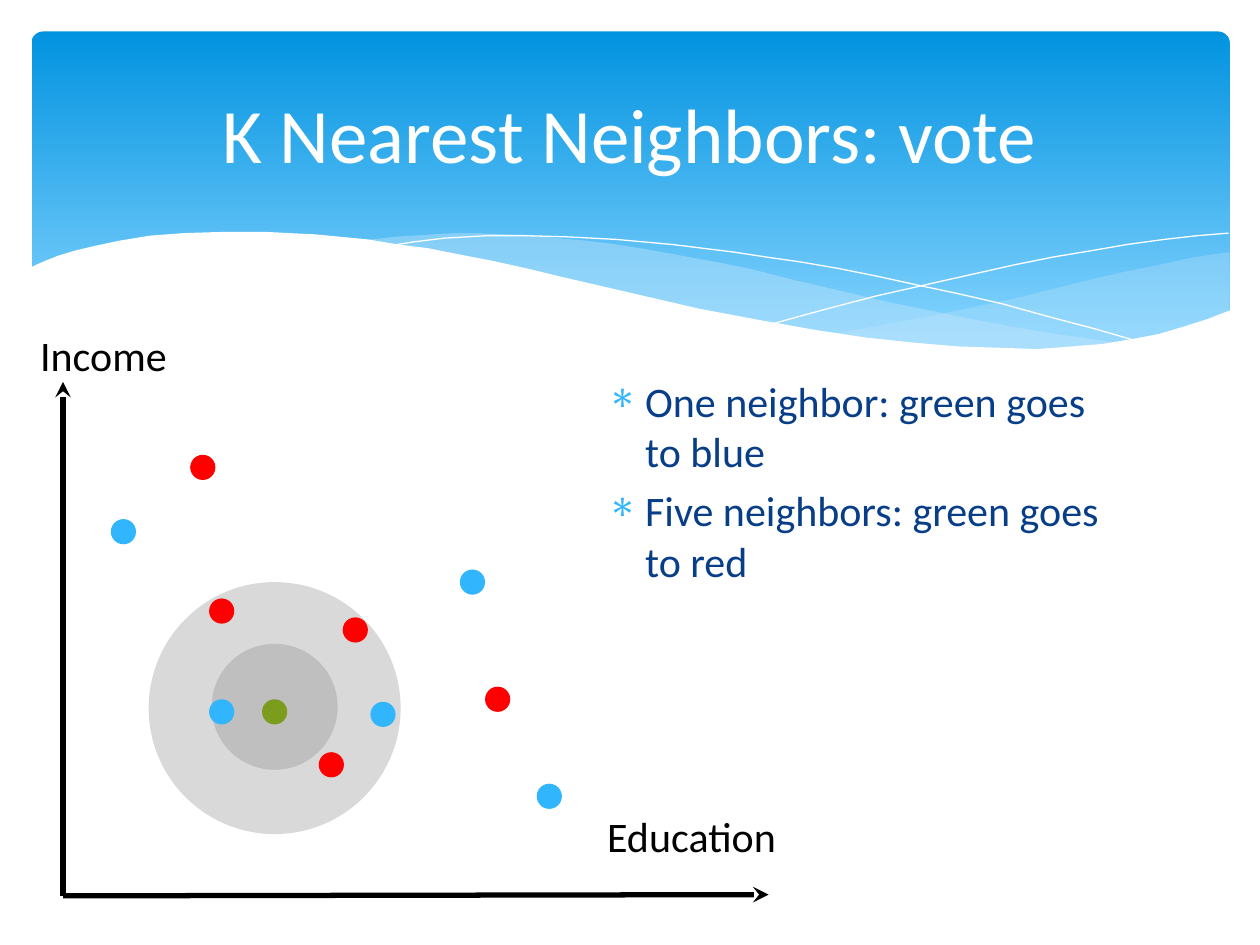
"""Builds a slide on voting among the K nearest neighbors."""
import pptx
import pptx.dml.color
import pptx.enum.dml
import pptx.enum.shapes
import pptx.enum.text
import pptx.oxml.ns
import pptx.util
from lxml import etree

Inches = pptx.util.Inches
Pt = pptx.util.Pt
RGBColor = pptx.dml.color.RGBColor
Kind = pptx.enum.shapes.MSO_SHAPE
Align = pptx.enum.text.PP_ALIGN
Anchor = pptx.enum.text.MSO_ANCHOR
qn = pptx.oxml.ns.qn

WHITE = RGBColor(0xFF, 0xFF, 0xFF)
BLACK = RGBColor(0, 0, 0)
NAVY = RGBColor(0x07, 0x3E, 0x87)
TOP = RGBColor(0x02, 0x93, 0xE0)
BASE = RGBColor(0x83, 0xD3, 0xFE)
PALE = RGBColor(0xC6, 0xE7, 0xFC)
LIGHT = RGBColor(0xD9, 0xD9, 0xD9)
GRAY = RGBColor(0xBF, 0xBF, 0xBF)
RED = RGBColor(0xFF, 0, 0)
BLUE = RGBColor(0x31, 0xB6, 0xFD)
GREEN = RGBColor(0x7C, 0x9C, 0x1E)

DOT = 0.2
DOTS = {
    RED: [(1.51, 3.61), (1.66, 4.75), (2.53, 5.97), (2.72, 4.9), (3.85, 5.45)],
    BLUE: [(0.88, 4.12), (1.66, 5.55), (2.94, 5.57), (3.65, 4.52), (4.26, 6.22)],
    GREEN: [(2.08, 5.55)],
}

# Curve points are in hundredths of an inch.
RIGHT = [
    (976, 200), (948, 204), (921, 210), (891, 216), (861, 223), (805, 237),
    (753, 248), (706, 257), (661, 265), (691, 269), (719, 272), (745, 275),
    (769, 277), (803, 278), (835, 277), (863, 275), (889, 272), (913, 267),
    (935, 262), (949, 257), (963, 252), (976, 247)]
LEFT = [
    (893, 273), (866, 269), (837, 265), (807, 260), (775, 254), (741, 247),
    (706, 240), (668, 231), (629, 222), (598, 214), (569, 208), (541, 203),
    (514, 198), (489, 194), (465, 191), (442, 189), (420, 187), (399, 186),
    (380, 185), (361, 185), (344, 186), (313, 188), (286, 191), (323, 196),
    (362, 203), (404, 211), (449, 222), (491, 232), (530, 240), (566, 248),
    (601, 255), (634, 261), (665, 266), (695, 270), (722, 274), (748, 276),
    (773, 277), (796, 278), (828, 278), (857, 277), (876, 275), (893, 273)]
FALL = [
    (309, 195), (328, 192), (353, 189), (387, 187), (416, 187), (450, 188),
    (489, 190), (533, 194), (582, 200), (608, 204), (636, 208), (665, 213),
    (695, 219), (727, 226), (760, 233), (795, 241), (831, 251), (869, 261),
    (907, 272)]
RISE = [
    (613, 257), (653, 246), (695, 235), (748, 223), (806, 210), (836, 204),
    (866, 199), (895, 194), (924, 190), (951, 187), (975, 185)]
FRONT = [
    (977, 246), (959, 253), (940, 259), (920, 265), (899, 269), (875, 273),
    (850, 275), (823, 277), (793, 276), (761, 275), (726, 272), (688, 268),
    (648, 262), (603, 254), (555, 245), (503, 233), (447, 220), (418, 213),
    (391, 207), (365, 202), (340, 197), (316, 194), (292, 190), (271, 188),
    (250, 186), (230, 185), (211, 184), (177, 184), (146, 185), (119, 187),
    (95, 191), (76, 195), (59, 199), (46, 203), (36, 207), (29, 210),
    (23, 213), (23, 329), (977, 329)]


def paint(shape, color, alpha=100):
    """Give a shape a plain fill, with no line or shadow."""
    shape.shadow.inherit = False
    shape.line.fill.background()
    shape.fill.solid()
    shape.fill.fore_color.rgb = color
    if alpha < 100:
        tint = shape.fill._xPr.find(".//" + qn("a:srgbClr"))
        etree.SubElement(tint, qn("a:alpha"), val=str(alpha * 1000))


def write(frame, *lines, size=24, color=BLACK, align=Align.LEFT,
          anchor=Anchor.TOP, before=0, mark=None):
    """Fill a text frame with one paragraph for each line."""
    frame.word_wrap = True
    frame.auto_size = pptx.enum.text.MSO_AUTO_SIZE.NONE
    frame.vertical_anchor = anchor
    frame.text = "\n".join(lines)
    for par in frame.paragraphs:
        par.alignment = align
        par.space_before = Pt(before)
        font = par.runs[0].font
        font.name, font.size, font.color.rgb = "Calibri", Pt(size), color
        if mark:
            bullet(par, mark)


def bullet(par, mark):
    """Set a hanging bullet on a paragraph."""
    props = par._p.get_or_add_pPr()
    props.set("marL", str(Inches(0.3)))
    props.set("indent", str(-Inches(0.3)))
    tint = etree.SubElement(props, qn("a:buClr"))
    etree.SubElement(tint, qn("a:srgbClr"), val=str(BLUE))
    etree.SubElement(props, qn("a:buFont"), typeface="Symbol")
    etree.SubElement(props, qn("a:buChar"), char=mark)


def place(shape, left, top, width, height):
    """Move a placeholder and bring it to the front."""
    shape.left, shape.top = Inches(left), Inches(top)
    shape.width, shape.height = Inches(width), Inches(height)
    shape.element.getparent().append(shape.element)
    return shape.text_frame


def label(slide, text, left, top, width):
    """Add an axis label."""
    box = slide.shapes.add_textbox(
        Inches(left), Inches(top), Inches(width), Inches(0.5))
    write(box.text_frame, text)


def disc(slide, left, top, size, color):
    """Add a filled circle."""
    shape = slide.shapes.add_shape(
        Kind.OVAL, Inches(left), Inches(top), Inches(size), Inches(size))
    paint(shape, color)


def axis(slide, right, top):
    """Add an axis arrow from the plot's origin."""
    line = slide.shapes.add_connector(
        pptx.enum.shapes.MSO_CONNECTOR.STRAIGHT,
        Inches(0.5), Inches(7.11), Inches(right), Inches(top))
    line.line.color.rgb = BLACK
    line.line.width = Pt(3)
    etree.SubElement(line.line._get_or_add_ln(), qn("a:tailEnd"), type="stealth")
    etree.SubElement(line.element.spPr, qn("a:effectLst"))


def outline(slide, points, close=True):
    """Add a freeform through points."""
    path = slide.shapes.build_freeform(*points[0], scale=Inches(0.01))
    path.add_line_segments(points[1:], close=close)
    return path.convert_to_shape()


def banner(slide):
    """Draw the blue banner and its waves."""
    panel = slide.shapes.add_shape(
        Kind.ROUNDED_RECTANGLE, Inches(0.25), Inches(0.25), Inches(9.51), Inches(2.7))
    panel.adjustments[0] = 0.034
    paint(panel, TOP)
    panel.fill.gradient()
    panel.fill.gradient_angle = 270
    for stop, (color, spot) in zip(panel.fill.gradient_stops, [(TOP, 0), (BASE, 0.9)]):
        stop.color.rgb, stop.position = color, spot
    paint(outline(slide, RIGHT), PALE, alpha=29)
    paint(outline(slide, LEFT), PALE, alpha=40)
    for points in (FALL, RISE):
        curve = outline(slide, points, close=False)
        curve.shadow.inherit = False
        curve.fill.background()
        curve.line.color.rgb = WHITE
        curve.line.width = Pt(0)
    paint(outline(slide, FRONT), WHITE)


def main():
    """Build and save the slide."""
    deck = pptx.Presentation()
    deck.slide_width, deck.slide_height = Inches(10), Inches(7.5)
    slide = deck.slides.add_slide(deck.slide_layouts[1])
    banner(slide)
    disc(slide, 1.18, 4.62, 2, LIGHT)
    disc(slide, 1.68, 5.11, 1, GRAY)
    body = place(slide.placeholders[1], 4.72, 2.93, 4.33, 3.24)
    body.margin_right = Inches(0.2)
    write(body, "One neighbor: green goes to blue", "Five neighbors: green goes to red",
          color=NAVY, before=4.8, mark="∗")
    title = place(slide.shapes.title, 0.5, 0.37, 9, 1.37)
    write(title, "K Nearest Neighbors: vote", size=44, color=WHITE,
          align=Align.CENTER, anchor=Anchor.MIDDLE)
    axis(slide, 6.1, 7.1)
    axis(slide, 0.5, 3.03)
    for color, spots in DOTS.items():
        for left, top in spots:
            disc(slide, left, top, DOT, color)
    label(slide, "Income", 0.22, 2.57, 1.56)
    label(slide, "Education", 4.72, 6.38, 2.17)
    deck.save("out.pptx")


if __name__ == "__main__":
    main()
